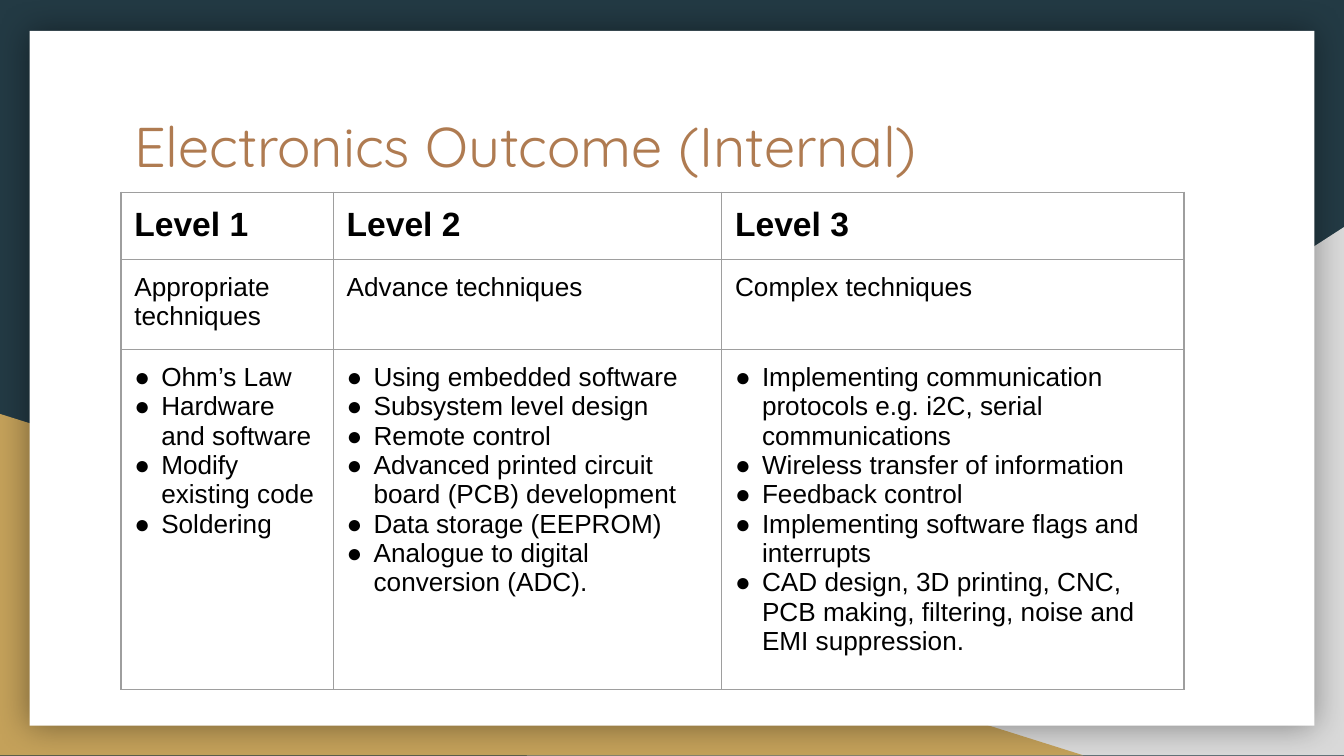
import pptx
import pptx.util
import pptx.dml.color
import pptx.enum.shapes
import pptx.enum.text
import pptx.oxml
import pptx.oxml.ns

Inches = pptx.util.Inches
Pt = pptx.util.Pt
Shapes = pptx.enum.shapes.MSO_SHAPE
MARGIN = Inches(0.1)
INDENT = Inches(0.2)
NAMESPACE = pptx.oxml.ns.nsdecls("a")

LEVELS = [
    ("Level 1", "Appropriate techniques", [
        "Ohm’s Law",
        "Hardware and software",
        "Modify existing code",
        "Soldering",
    ]),
    ("Level 2", "Advance techniques", [
        "Using embedded software",
        "Subsystem level design",
        "Remote control",
        "Advanced printed circuit board (PCB) development",
        "Data storage (EEPROM)",
        "Analogue to digital conversion (ADC).",
    ]),
    ("Level 3", "Complex techniques", [
        "Implementing communication protocols e.g. i2C, serial communications",
        "Wireless transfer of information",
        "Feedback control",
        "Implementing software flags and interrupts",
        "CAD design, 3D printing, CNC, PCB making, filtering, noise and EMI suppression.",
    ]),
]
COLUMN_WIDTHS = [1.58, 2.89, 3.44]
ROW_HEIGHTS = [0.48, 0.64, 2.39]


def color(value):
    return pptx.dml.color.RGBColor.from_string(value)


def element(xml):
    return pptx.oxml.parse_xml(xml)


def write(paragraph, text, size=14, font="Arial", fill="000000", bold=False, bullet=None):
    run = paragraph.add_run()
    run.text = text
    run.font.size = Pt(size)
    run.font.name = font
    run.font.bold = bold
    run.font.color.rgb = color(fill)
    if bullet:
        properties = paragraph._p.get_or_add_pPr()
        properties.set("marL", str(INDENT))
        properties.set("indent", str(-INDENT))
        properties.append(element(
            f'<a:buClr {NAMESPACE}><a:srgbClr val="{fill}"/></a:buClr>'))
        properties.append(element(f'<a:buFont {NAMESPACE} typeface="{font}"/>'))
        properties.append(element(f'<a:buChar {NAMESPACE} char="{bullet}"/>'))


def add_panel(slide, kind, left, top, width, height, fill):
    panel = slide.shapes.add_shape(
        kind, Inches(left), Inches(top), Inches(width), Inches(height))
    panel.shadow.inherit = False
    panel.fill.solid()
    panel.fill.fore_color.rgb = color(fill)
    panel.line.fill.background()
    return panel


def add_backdrop(slide, left, top, width, height):
    slide.background.fill.solid()
    slide.background.fill.fore_color.rgb = color("233A44")
    right, bottom = left + width, top + height

    gray_corner = add_panel(slide, Shapes.RIGHT_TRIANGLE,
                            right - 6.08, bottom - 3.93, 6.08, 3.93, "D9D9D9")
    gray_corner._element.spPr.xfrm.set("flipH", "1")
    add_panel(slide, Shapes.RIGHT_TRIANGLE, left, bottom - 2.54, 8.06, 2.54, "C4A15A")

    card = add_panel(slide, Shapes.RECTANGLE,
                     left + 0.22, top + 0.23, width - 0.44, height - 0.45, "FFFFFF")
    effects = card._element.spPr.find(pptx.oxml.ns.qn("a:effectLst"))
    effects.append(element(
        f'<a:outerShdw {NAMESPACE} blurRad="{Pt(18)}" dist="0" dir="0" algn="ctr" '
        'rotWithShape="0"><a:srgbClr val="000000"><a:alpha val="40000"/>'
        '</a:srgbClr></a:outerShdw>'))


def add_title(slide, left, top, width, height):
    title = slide.shapes.add_textbox(
        Inches(left), Inches(top), Inches(width), Inches(height))
    frame = title.text_frame
    frame.word_wrap = True
    frame.vertical_anchor = pptx.enum.text.MSO_ANCHOR.TOP
    frame.margin_left = frame.margin_right = MARGIN
    frame.margin_top = frame.margin_bottom = MARGIN
    write(frame.paragraphs[0], "Electronics Outcome (Internal)",
          size=30, font="Quicksand", fill="AF7B51")


def fill_cell(cell, lines, **text_format):
    cell.margin_left = cell.margin_right = MARGIN
    cell.margin_top = cell.margin_bottom = MARGIN
    properties = cell._tc.get_or_add_tcPr()
    for side in "LRTB":
        properties.append(element(
            f'<a:ln{side} {NAMESPACE} w="{Pt(0.75)}"><a:solidFill>'
            f'<a:srgbClr val="9E9E9E"/></a:solidFill></a:ln{side}>'))
    cell.fill.background()
    frame = cell.text_frame
    for index, line in enumerate(lines):
        paragraph = frame.add_paragraph() if index else frame.paragraphs[0]
        write(paragraph, line, **text_format)


def add_levels(slide, left, top, widths, heights):
    levels = slide.shapes.add_table(
        len(heights), len(widths), Inches(left), Inches(top),
        Inches(sum(widths)), Inches(sum(heights))).table
    levels.first_row = False
    levels.horz_banding = False
    for row, height in zip(levels.rows, heights):
        row.height = Inches(height)
    for index, (width, (level, technique, topics)) in enumerate(zip(widths, LEVELS)):
        levels.columns[index].width = Inches(width)
        fill_cell(levels.cell(0, index), [level], size=18, bold=True)
        fill_cell(levels.cell(1, index), [technique])
        fill_cell(levels.cell(2, index), topics, bullet="●")


def main():
    presentation = pptx.Presentation()
    presentation.slide_width = Inches(10)
    presentation.slide_height = Inches(5.625)
    slide = presentation.slides.add_slide(presentation.slide_layouts[6])
    add_backdrop(slide, 0, 0, 10, 5.62)
    add_title(slide, 0.9, 0.73, 8.21, 1.04)
    add_levels(slide, 0.9, 1.43, COLUMN_WIDTHS, ROW_HEIGHTS)
    presentation.save("out.pptx")


if __name__ == "__main__":
    main()
